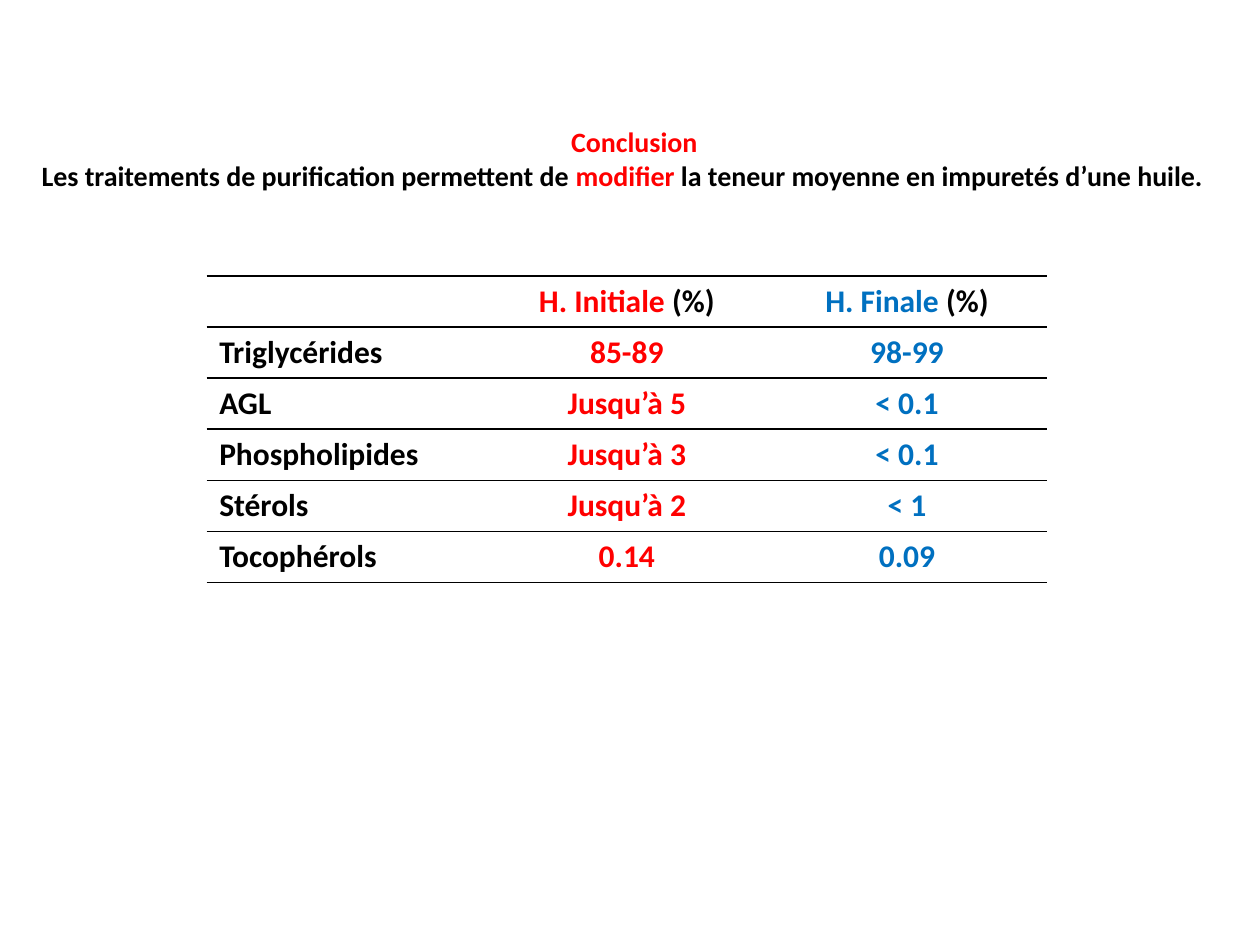
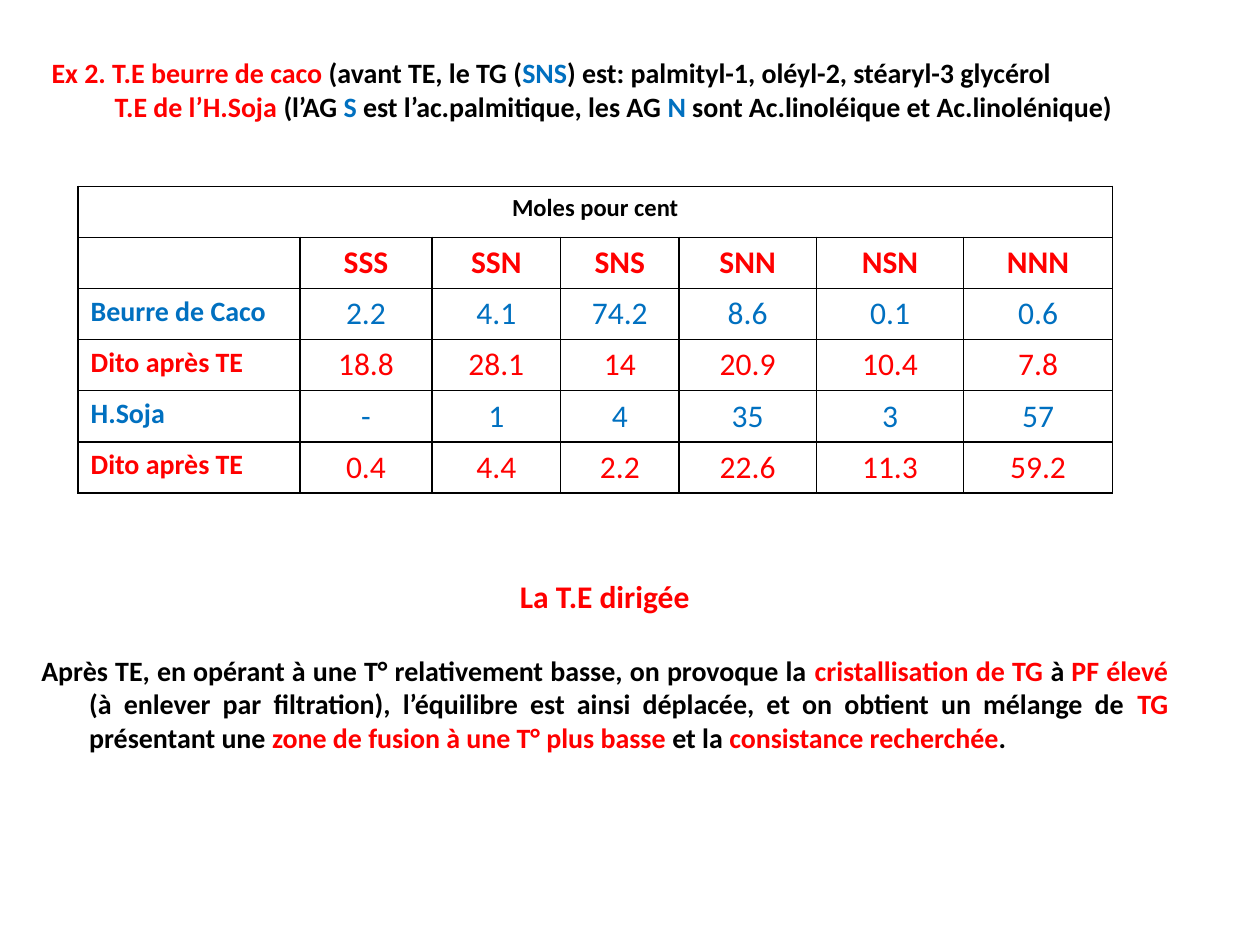
from lxml.etree import SubElement
from pptx import Presentation
from pptx.dml.color import RGBColor
from pptx.enum.text import MSO_ANCHOR, MSO_AUTO_SIZE, PP_ALIGN
from pptx.oxml.ns import qn
from pptx.util import Inches, Pt

WIDTH, HEIGHT = Inches(10), Inches(7.5)
COLUMNS, ROWS = 100, 75
COLORS = {"red": "FF0000", "blue": "0070C0", "black": "000000", "white": "FFFFFF"}
FONT = "Calibri"
HANGING = (0.38, -0.38)
FRAME_FORMAT = {
    "word_wrap": True,
    "auto_size": MSO_AUTO_SIZE.NONE,
    "vertical_anchor": MSO_ANCHOR.TOP,
}
TABLE_FORMAT = {"first_row": False, "horz_banding": False}
HORIZONTAL = ("T", "B")
ALL_SIDES = ("L", "R", "T", "B")


def grid_box(left, top, width, height):
    """Turn columns and rows of the slide grid into lengths."""
    across, down = WIDTH / COLUMNS, HEIGHT / ROWS
    return [int(part * step) for part, step in
            zip((left, top, width, height), (across, down, across, down))]


def set_attributes(target, values):
    """Set each named attribute of the target."""
    for name, value in values.items():
        setattr(target, name, value)


def write_spans(para, spans, size=16, bold=True, align=PP_ALIGN.LEFT):
    """Fill a paragraph with (colour, text) spans."""
    para.alignment = align
    for color, text in spans:
        span = para.add_run()
        span.text = text
        set_attributes(span.font, {"name": FONT, "size": Pt(size), "bold": bold})
        span.font.color.rgb = RGBColor.from_string(COLORS[color])


def write_paragraphs(frame, paragraphs):
    """Fill a text frame with paragraphs given as format dicts."""
    set_attributes(frame, FRAME_FORMAT)
    for index, item in enumerate(paragraphs):
        para = frame.add_paragraph() if index else frame.paragraphs[0]
        margin, indent = item.get("indent", HANGING)
        properties = para._p.get_or_add_pPr()
        properties.set("marL", str(Inches(margin)))
        properties.set("indent", str(Inches(indent)))
        para.space_before = Pt(item.get("before", 0))
        write_spans(para, item["spans"], item.get("size", 16),
                    align=item.get("align", PP_ALIGN.JUSTIFY))


def add_title(page, box, paragraphs):
    """Move the title placeholder into the box and write it."""
    set_attributes(page.shapes.title, dict(zip(("left", "top", "width", "height"), box)))
    write_paragraphs(page.shapes.title.text_frame, paragraphs)


def add_text(page, box, paragraphs):
    """Add a text box with paragraphs."""
    write_paragraphs(page.shapes.add_textbox(*box).text_frame, paragraphs)


def style_cell(cell, sides):
    """Give a cell a white fill and black lines on the named sides."""
    cell.fill.solid()
    cell.fill.fore_color.rgb = RGBColor.from_string(COLORS["white"])
    properties = cell._tc.get_or_add_tcPr()
    for position, side in enumerate(ALL_SIDES):
        line = SubElement(properties, qn(f"a:ln{side}"), w=str(Pt(1)))
        properties.insert(position, line)
        if side in sides:
            fill = SubElement(line, qn("a:solidFill"))
            SubElement(fill, qn("a:srgbClr"), val=COLORS["black"])
        else:
            SubElement(line, qn("a:noFill"))


def add_grid(page, box, weights, row_count, sides):
    """Add a table whose columns share the box by weight."""
    table = page.shapes.add_table(row_count, len(weights), *box).table
    set_attributes(table, TABLE_FORMAT)
    for column, weight in zip(table.columns, weights):
        column.width = int(box[2] * weight / sum(weights))
    for row in table.rows:
        row.height = box[3] // row_count
    for cell in table.iter_cells():
        style_cell(cell, sides)
    return table


def write_cell(cell, spans, **formats):
    """Write spans into the first paragraph of a cell."""
    write_spans(cell.text_frame.paragraphs[0], spans, **formats)


def add_purity_table(page, box):
    """Add the table of initial and final oil contents."""
    contents = [
        ("Triglycérides", "85-89", "98-99"),
        ("AGL", "Jusqu’à 5", "< 0.1"),
        ("Phospholipides", "Jusqu’à 3", "< 0.1"),
        ("Stérols", "Jusqu’à 2", "< 1"),
        ("Tocophérols", "0.14", "0.09"),
    ]
    table = add_grid(page, box, [1, 1, 1], len(contents) + 1, HORIZONTAL)
    headings = [("red", "H. Initiale "), ("blue", "H. Finale ")]
    for index, heading in enumerate(headings, 1):
        write_cell(table.cell(0, index), [heading, ("black", "(%)")],
                   size=18, align=PP_ALIGN.CENTER)
    for row, values in enumerate(contents, 1):
        for column, (color, text) in enumerate(zip(("black", "red", "blue"), values)):
            align = PP_ALIGN.CENTER if column else PP_ALIGN.LEFT
            write_cell(table.cell(row, column), [(color, text)], size=18, align=align)


def add_mole_table(page, box):
    """Add the table of glyceride types before and after the reaction."""
    types = ["SSS", "SSN", "SNS", "SNN", "NSN", "NNN"]
    oils = [
        ("blue", "Beurre de Caco", ["2.2", "4.1", "74.2", "8.6", "0.1", "0.6"]),
        ("red", "Dito après TE", ["18.8", "28.1", "14", "20.9", "10.4", "7.8"]),
        ("blue", "H.Soja", ["-", "1", "4", "35", "3", "57"]),
        ("red", "Dito après TE", ["0.4", "4.4", "2.2", "22.6", "11.3", "59.2"]),
    ]
    weights = [1.76, 1.05, 1.02, 0.94, 1.09, 1.17, 1.18]
    table = add_grid(page, box, weights, len(oils) + 2, ALL_SIDES)
    table.cell(0, 0).merge(table.cell(0, len(types)))
    write_cell(table.cell(0, 0), [("black", "Moles pour cent")],
               size=14, align=PP_ALIGN.CENTER)
    for column, name in enumerate(types, 1):
        write_cell(table.cell(1, column), [("red", name)], size=18, align=PP_ALIGN.CENTER)
    for row, (color, oil, values) in enumerate(oils, 2):
        write_cell(table.cell(row, 0), [(color, oil)])
        for column, value in enumerate(values, 1):
            write_cell(table.cell(row, column), [(color, value)],
                       size=18, bold=False, align=PP_ALIGN.CENTER)


def build_conclusion(page):
    """Build the slide on purification results."""
    add_title(page, grid_box(2.3, 9.4, 96.1, 6.4), [
        {"align": PP_ALIGN.CENTER, "spans": [("red", "Conclusion")]},
        {"spans": [
            ("black", "Les traitements de purification permettent de "),
            ("red", "modifier"),
            ("black", " la teneur moyenne en impuretés d’une huile."),
        ]},
    ])
    add_purity_table(page, grid_box(16.4, 21.9, 66.7, 24.3))


def build_example(page):
    """Build the slide on the second example and the directed reaction."""
    add_title(page, grid_box(3.1, 3.9, 91.4, 6.4), [
        {"spans": [
            ("red", "Ex 2. T.E beurre de caco "),
            ("black", "(avant TE, le TG ("),
            ("blue", "SNS"),
            ("black", ") est: palmityl-1, oléyl-2, stéaryl-3 glycérol"),
        ]},
        {"indent": (0.5, 0), "spans": [
            ("red", "T.E de l’H.Soja "),
            ("black", "(l’AG "),
            ("blue", "S"),
            ("black", " est l’ac.palmitique, les AG "),
            ("blue", "N"),
            ("black", " sont Ac.linoléique et Ac.linolénique)"),
        ]},
    ])
    add_mole_table(page, grid_box(6.2, 14.8, 82.1, 24.3))
    add_text(page, grid_box(2.3, 45.3, 91.4, 15.1), [
        {"align": PP_ALIGN.CENTER, "size": 18, "spans": [("red", "La T.E dirigée")]},
        {"before": 22, "spans": [
            ("black", "Après TE, en opérant à une T° relativement basse, on provoque la "),
            ("red", "cristallisation de TG "),
            ("black", "à "),
            ("red", "PF élevé "),
            ("black", "(à enlever par filtration), l’équilibre est ainsi déplacée, "
                      "et on obtient un mélange de "),
            ("red", "TG"),
            ("black", " présentant une "),
            ("red", "zone de fusion à une T° plus basse "),
            ("black", "et la "),
            ("red", "consistance recherchée"),
            ("black", "."),
        ]},
    ])


def main():
    """Build and save the deck."""
    deck = Presentation()
    set_attributes(deck, {"slide_width": WIDTH, "slide_height": HEIGHT})
    title_only = deck.slide_layouts.get_by_name("Title Only")
    for build in (build_conclusion, build_example):
        build(deck.slides.add_slide(title_only))
    deck.save("out.pptx")


if __name__ == "__main__":
    main()
